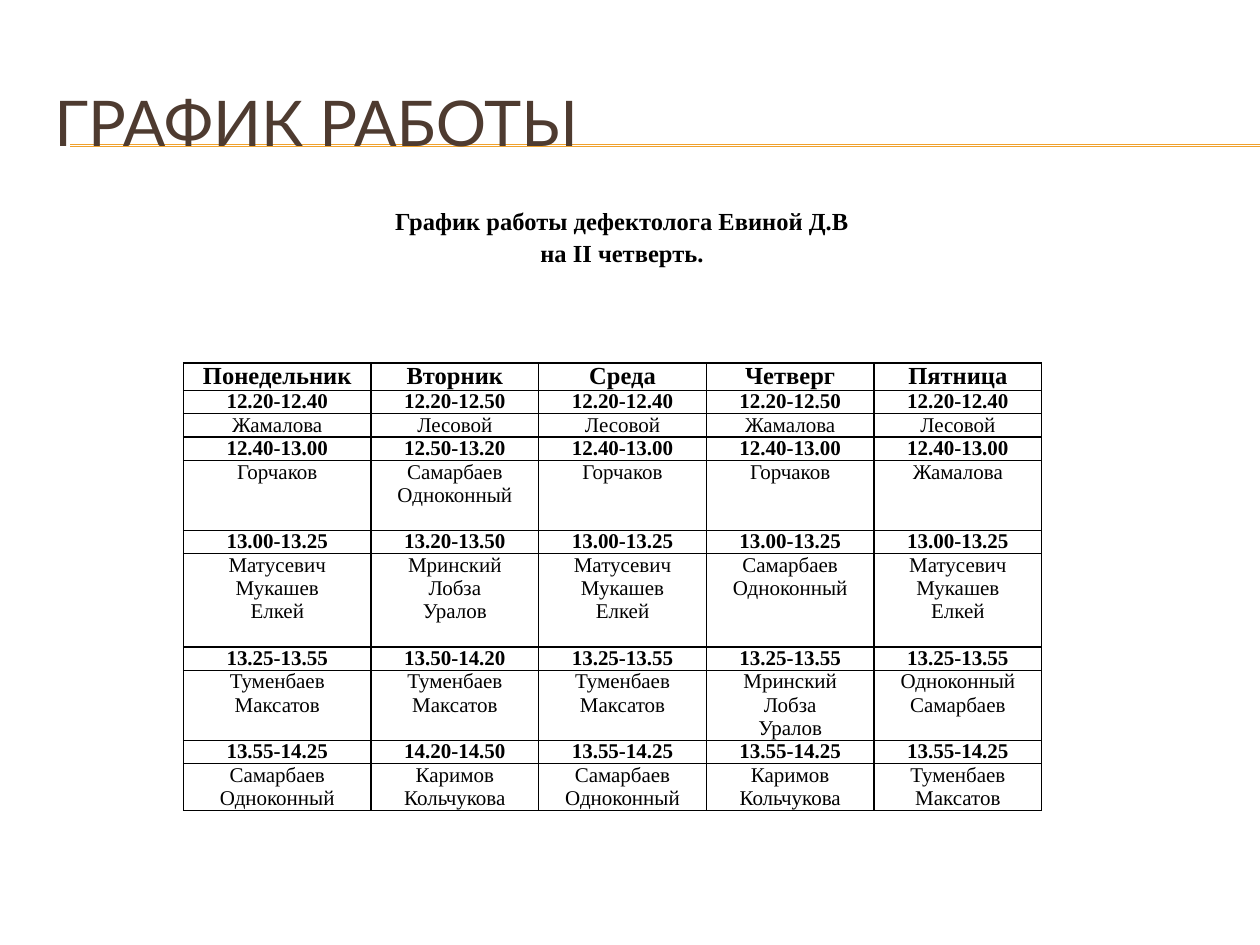
from lxml import etree
from pptx import Presentation
from pptx.dml.color import RGBColor
from pptx.enum.shapes import MSO_CONNECTOR
from pptx.enum.text import MSO_ANCHOR, MSO_AUTO_SIZE, PP_ALIGN
from pptx.oxml.ns import qn
from pptx.util import Cm, Pt

LEFT, MID = PP_ALIGN.LEFT, PP_ALIGN.CENTER
TOP, CENTER = MSO_ANCHOR.TOP, MSO_ANCHOR.MIDDLE
STRAIGHT = MSO_CONNECTOR.STRAIGHT
FIXED = MSO_AUTO_SIZE.NONE
BLACK = RGBColor(0x00, 0x00, 0x00)
BROWN = RGBColor(0x4E, 0x3B, 0x30)
GOLD = RGBColor(0xF0, 0xA2, 0x2E)
SERIF = "Times New Roman"
LINE = 0.47  # height of one 12 pt line in the table, cm

# Each row: number of text lines it holds, then one entry per day
DAYS = ["Понедельник", "Вторник", "Среда", "Четверг", "Пятница"]
ROWS = [
    (1, ["12.20-12.40", "12.20-12.50", "12.20-12.40", "12.20-12.50", "12.20-12.40"]),
    (1, ["Жамалова", "Лесовой", "Лесовой", "Жамалова", "Лесовой"]),
    (1, ["12.40-13.00", "12.50-13.20", "12.40-13.00", "12.40-13.00", "12.40-13.00"]),
    (3, ["Горчаков", "Самарбаев\nОдноконный", "Горчаков", "Горчаков", "Жамалова"]),
    (1, ["13.00-13.25", "13.20-13.50", "13.00-13.25", "13.00-13.25", "13.00-13.25"]),
    (4, ["Матусевич\nМукашев\nЕлкей", "Мринский\nЛобза\nУралов",
         "Матусевич\nМукашев\nЕлкей", "Самарбаев\nОдноконный",
         "Матусевич\nМукашев\nЕлкей"]),
    (1, ["13.25-13.55", "13.50-14.20", "13.25-13.55", "13.25-13.55", "13.25-13.55"]),
    (3, ["Туменбаев\nМаксатов", "Туменбаев\nМаксатов", "Туменбаев\nМаксатов",
         "Мринский\nЛобза\nУралов", "Одноконный\nСамарбаев"]),
    (1, ["13.55-14.25", "14.20-14.50", "13.55-14.25", "13.55-14.25", "13.55-14.25"]),
    (2, ["Самарбаев\nОдноконный", "Каримов\nКольчукова", "Самарбаев\nОдноконный",
         "Каримов\nКольчукова", "Туменбаев\nМаксатов"]),
]


def write(frame, text, size=12, font=SERIF, color=BLACK, bold=False,
          align=MID, space=None):
    frame.text = text
    for para in frame.paragraphs:
        para.alignment = align
        para.line_spacing = space
        for run in para.runs:
            run.font.size = Pt(size)
            run.font.name = font
            run.font.bold = bold
            run.font.color.rgb = color


def frame_cell(cell):
    """Give a cell black borders, thin side margins and no fill."""
    cell.margin_left = cell.margin_right = Cm(0.18)
    cell.margin_top = cell.margin_bottom = 0
    props = cell._tc.get_or_add_tcPr()
    for side in ("a:lnL", "a:lnR", "a:lnT", "a:lnB"):
        edge = etree.SubElement(props, qn(side), w=str(Pt(1)))
        fill = etree.SubElement(edge, qn("a:solidFill"))
        etree.SubElement(fill, qn("a:srgbClr"), val=str(BLACK))
    cell.fill.background()


deck = Presentation()
deck.slide_width, deck.slide_height = Cm(25.4), Cm(19.05)
slide = deck.slides.add_slide(deck.slide_layouts[5])

# Title with the double rule behind it
title = slide.shapes.title
title.left, title.top, title.width, title.height = Cm(0.84), Cm(1.27), Cm(24.13), Cm(2.34)
write(title.text_frame, "ГРАФИК РАБОТЫ", size=36, font="Lato", color=BROWN, align=LEFT)
title.text_frame.vertical_anchor = CENTER
title.text_frame.auto_size = FIXED

for y in (2.92, 2.95):
    rule = slide.shapes.add_connector(STRAIGHT, Cm(1.42), Cm(y), Cm(25.4), Cm(y))
    rule.line.color.rgb = GOLD
    rule.line.width = Pt(0.75)
    etree.SubElement(rule.element.spPr, qn("a:effectLst"))
    title.element.addprevious(rule.element)

# Timetable
grid = slide.shapes.add_table(len(ROWS) + 1, len(DAYS), Cm(3.7), Cm(7.32),
                              Cm(17.3), Cm(9)).table
grid.first_row = grid.horz_banding = False
for col in grid.columns:
    col.width = Cm(3.38)
grid.columns[0].width = Cm(3.78)

grid.rows[0].height = Cm(0.54)
for c, day in enumerate(DAYS):
    write(grid.cell(0, c).text_frame, day, size=14, bold=True)
for r, (lines, texts) in enumerate(ROWS, 1):
    grid.rows[r].height = Cm(lines * LINE)
    for c, text in enumerate(texts):
        write(grid.cell(r, c).text_frame, text, bold=r % 2 == 1)
for cell in grid.iter_cells():
    frame_cell(cell)

# Caption above the timetable
note = slide.shapes.add_textbox(Cm(3.7), Cm(3.94), Cm(17.68), Cm(2.24)).text_frame
note.word_wrap = True
note.vertical_anchor = TOP
note.margin_top = Cm(0.18)
write(note, "График работы дефектолога Евиной Д.В\nна II четверть.",
      size=14, bold=True, space=1.07)

deck.save("out.pptx")
